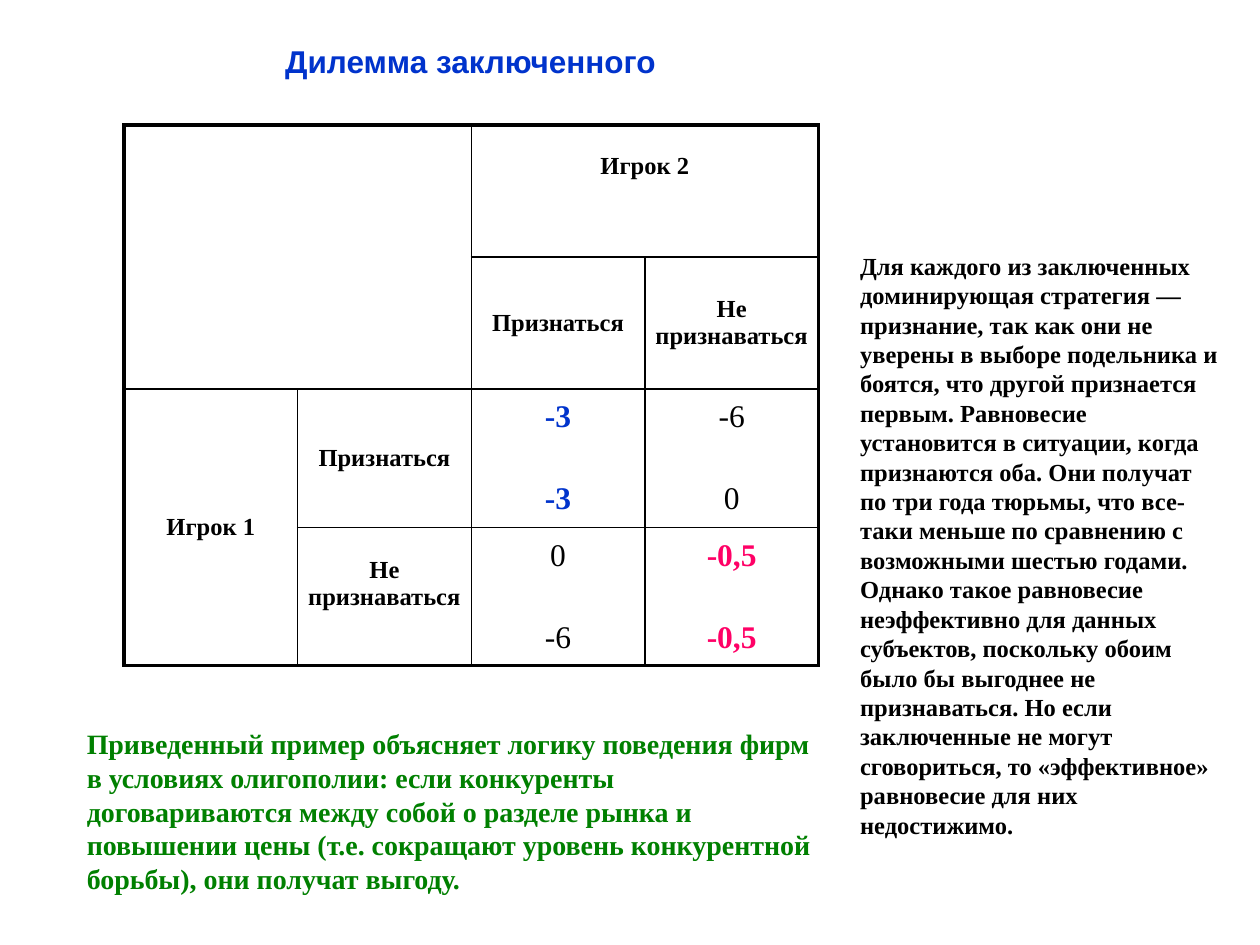
from dataclasses import dataclass

from lxml import etree
from pptx import Presentation
from pptx.dml.color import RGBColor
from pptx.enum.text import MSO_ANCHOR, PP_ALIGN
from pptx.oxml.ns import qn
from pptx.util import Cm, Pt

CENTER, LEFT = PP_ALIGN.CENTER, PP_ALIGN.LEFT
TOP, MIDDLE = MSO_ANCHOR.TOP, MSO_ANCHOR.MIDDLE


@dataclass(frozen=True)
class Theme:
    sans: str = "Arial"
    serif: str = "Times New Roman"
    black: str = "000000"
    blue: str = "0033CC"
    pink: str = "FF0066"
    green: str = "008000"
    large: int = 18
    medium: int = 16
    small: int = 14
    thin: float = 1
    thick: float = 2.25
    leading: float = 1.2


THEME = Theme()

TITLE = "Дилемма заключенного"
COMMENT = (
    "Для каждого из заключенных доминирующая стратегия — признание, "
    "так как они не уверены в выборе подельника и боятся, что другой "
    "признается первым. Равновесие установится в ситуации, когда "
    "признаются оба. Они получат по три года тюрьмы, что все-таки меньше "
    "по сравнению с возможными шестью годами. Однако такое равновесие "
    "неэффективно для данных субъектов, поскольку обоим было бы выгоднее "
    "не признаваться. Но если заключенные не могут сговориться, то "
    "«эффективное» равновесие для них недостижимо."
)
MORAL = (
    "Приведенный пример объясняет логику поведения фирм в условиях "
    "олигополии: если конкуренты договариваются между собой о разделе "
    "рынка и повышении цены (т.е. сокращают уровень конкурентной борьбы), "
    "они получат выгоду."
)
CONFESS, DENY = "Признаться", "Не признаваться"

# row, column, text, extra bottom margin in cm that lifts the label
LABELS = [
    (0, 2, "Игрок 2", 1),
    (1, 2, CONFESS, 0),
    (1, 3, DENY, 0),
    (2, 0, "Игрок 1", 0),
    (2, 1, CONFESS, 0),
    (3, 1, DENY, 0.5),
]
# row, column, payoffs of both players, colour, bold
PAYOFFS = [
    (2, 2, "-3\n-3", THEME.blue, True),
    (2, 3, "-6\n0", THEME.black, False),
    (3, 2, "0\n-6", THEME.black, False),
    (3, 3, "-0,5\n-0,5", THEME.pink, True),
]
MERGES = [((0, 0), (1, 1)), ((0, 2), (0, 3)), ((2, 0), (3, 0))]


def style(frame, size, color, font=THEME.serif, bold=True, align=LEFT):
    for para in frame.paragraphs:
        para.alignment = align
        for run in para.runs:
            run.font.name = font
            run.font.size = Pt(size)
            run.font.bold = bold
            run.font.color.rgb = RGBColor.from_string(color)


def put_text(shape, box, text, size, color, **look):
    shape.left, shape.top, shape.width, shape.height = map(Cm, box)
    frame = shape.text_frame
    frame.word_wrap = True
    frame.vertical_anchor = TOP
    frame.text = text
    style(frame, size, color, **look)
    para = frame.paragraphs[0]
    para.line_spacing = Pt(size * THEME.leading)
    para.space_before = Pt(0)


def add_note(slide, box, text, size, color):
    shape = slide.shapes.add_textbox(0, 0, 0, 0)
    put_text(shape, box, text, size, color)


def set_edge(cell, side, width):
    props = cell._tc.get_or_add_tcPr()
    line = etree.SubElement(props, qn(f"a:ln{side}"), w=str(Pt(width)))
    fill = etree.SubElement(line, qn("a:solidFill"))
    etree.SubElement(fill, qn("a:srgbClr"), val=THEME.black)


def draw_grid(table):
    """Thick lines around the table, thin lines inside it."""
    rows, cols = len(table.rows), len(table.columns)
    for row in range(rows):
        for col in range(cols):
            cell = table.cell(row, col)
            if cell.is_spanned:
                continue
            high = cell.span_height if cell.is_merge_origin else 1
            wide = cell.span_width if cell.is_merge_origin else 1
            outer = {
                "L": col == 0,
                "R": col + wide == cols,
                "T": row == 0,
                "B": row + high == rows,
            }
            for side, thick in outer.items():
                set_edge(cell, side, THEME.thick if thick else THEME.thin)
            cell.fill.background()


def fill_cell(cell, text, size, color, bold=True, lift=0):
    cell.vertical_anchor = MIDDLE
    cell.margin_left = cell.margin_right = cell.margin_top = Cm(0.05)
    cell.margin_bottom = Cm(0.05 + lift)
    cell.text_frame.text = text
    style(cell.text_frame, size, color, bold=bold, align=CENTER)


def add_game(slide):
    frame = slide.shapes.add_table(4, 4, Cm(2.5), Cm(2.52), Cm(14), Cm(10.9))
    table = frame.table
    table.first_row = table.horz_banding = False
    for col in table.columns:
        col.width = Cm(3.5)
    for row, height in zip(table.rows, (2.66, 2.66, 2.79, 2.79)):
        row.height = Cm(height)
    for start, end in MERGES:
        table.cell(*start).merge(table.cell(*end))
    draw_grid(table)
    for row, col, text, lift in LABELS:
        fill_cell(table.cell(row, col), text, THEME.small, THEME.black,
                  lift=lift)
    for row, col, text, color, bold in PAYOFFS:
        cell = table.cell(row, col)
        fill_cell(cell, text, THEME.large, color, bold)
        cell.text_frame.paragraphs[1].space_before = Pt(27)


def main():
    deck = Presentation()
    deck.slide_width, deck.slide_height = Cm(25.4), Cm(19.05)
    slide = deck.slides.add_slide(deck.slide_layouts[5])
    put_text(slide.shapes.title, (2.69, 0.71, 13.59, 1.02), TITLE,
             THEME.large, THEME.blue, font=THEME.sans, align=CENTER)
    add_game(slide)
    add_note(slide, (17.09, 4.93, 7.8, 12.07), COMMENT,
             THEME.small, THEME.black)
    add_note(slide, (1.5, 14.53, 15.19, 3.66), MORAL,
             THEME.medium, THEME.green)
    deck.save("out.pptx")


if __name__ == "__main__":
    main()
